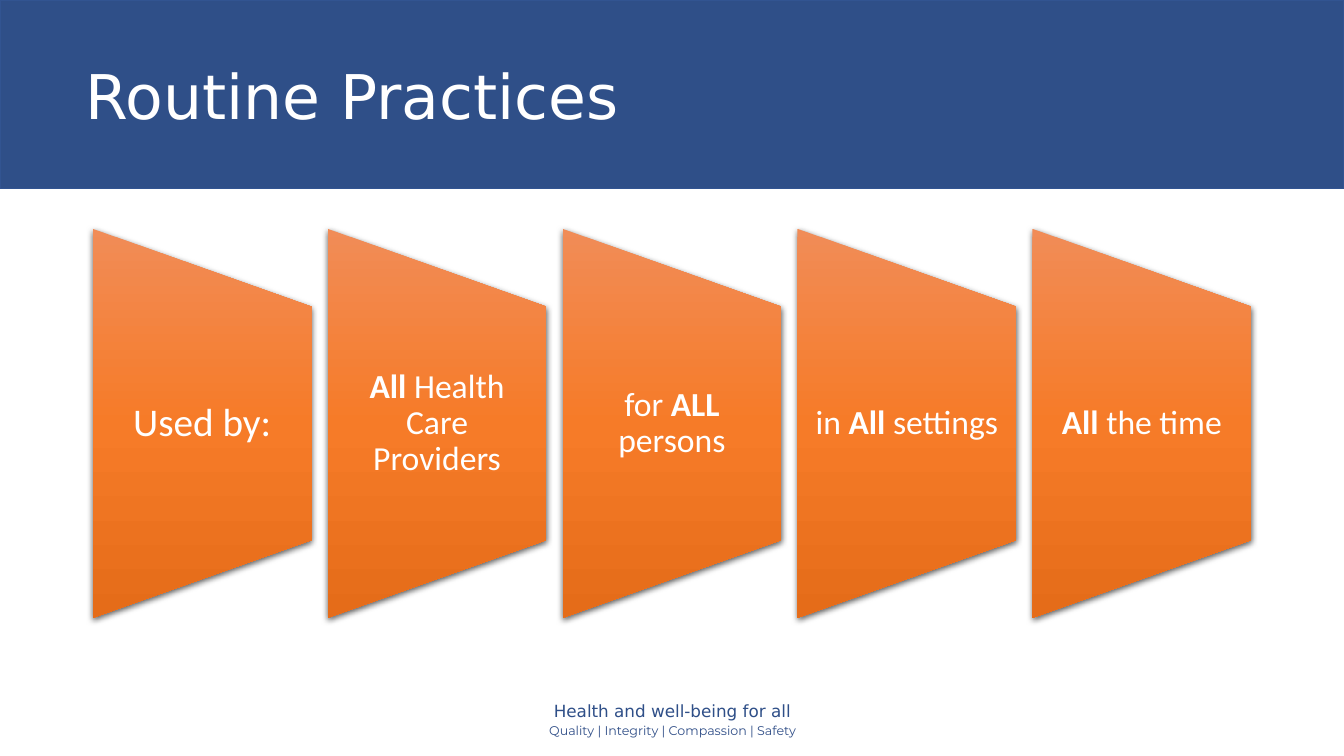
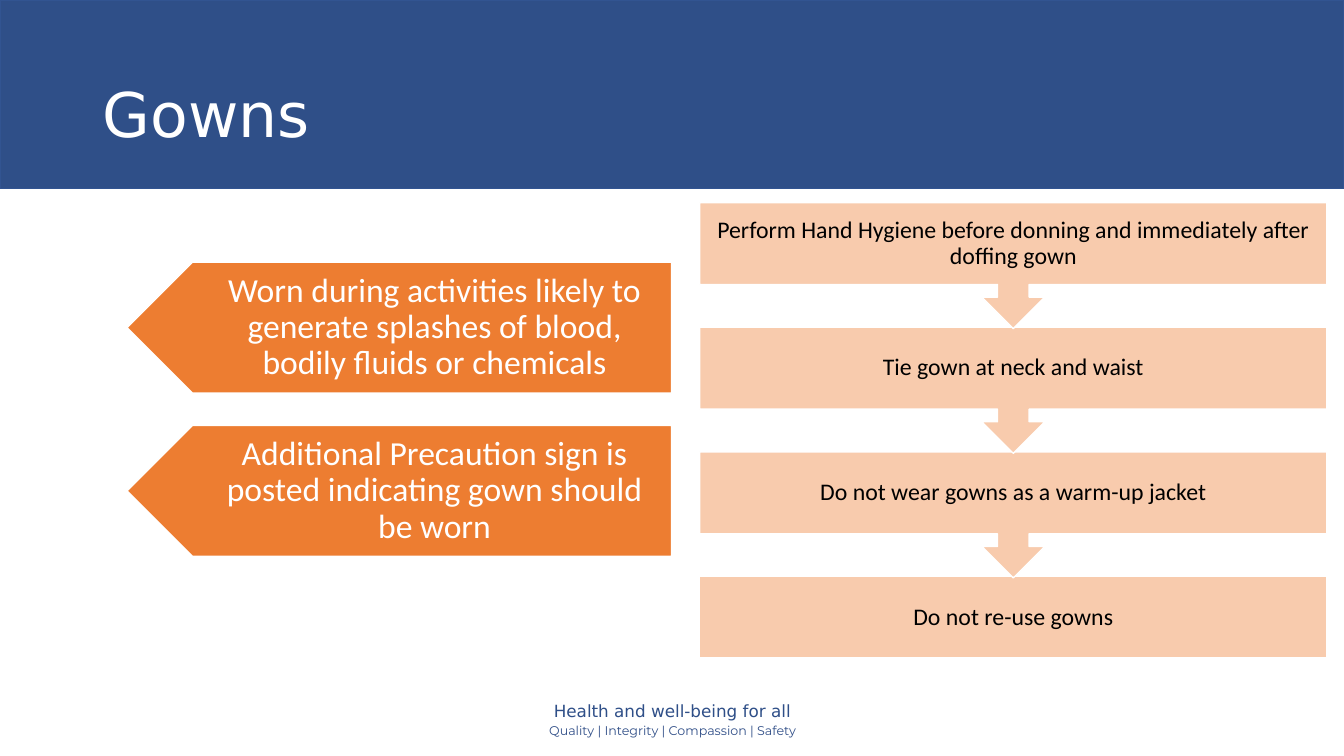
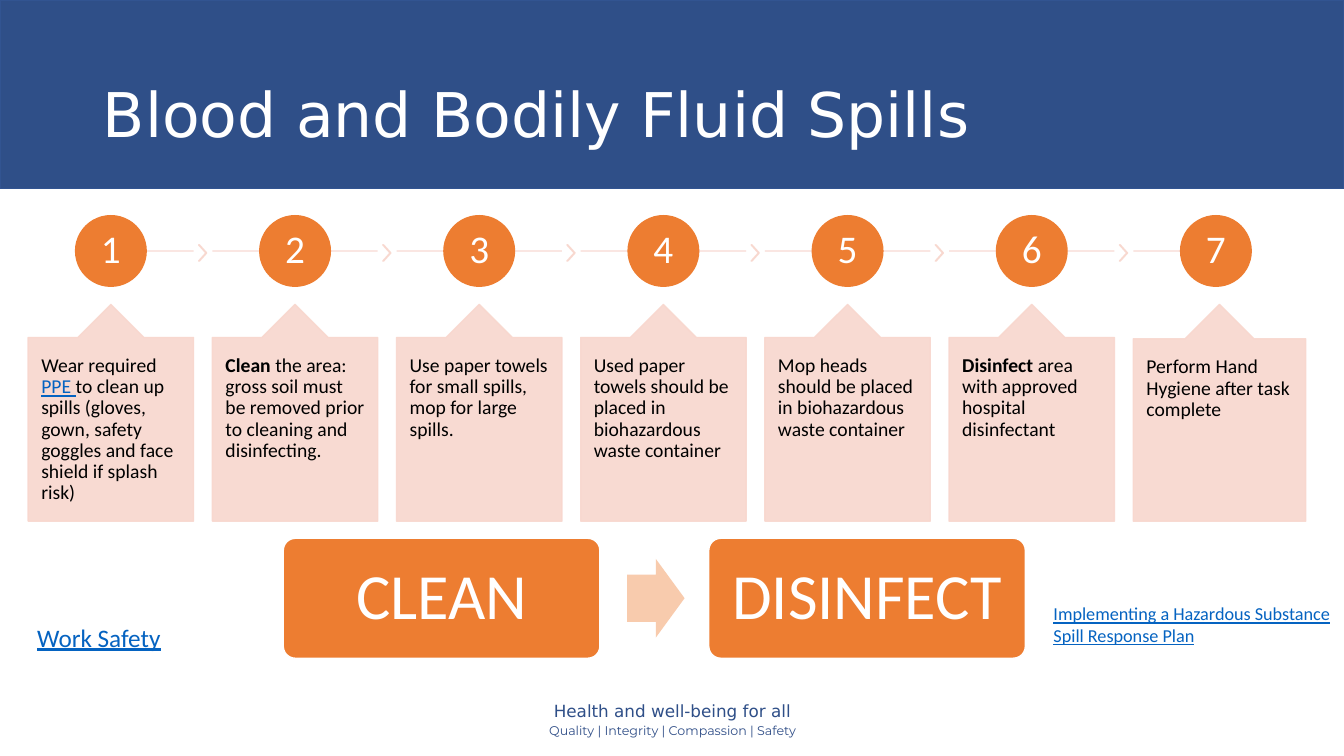
from pptx import Presentation
from pptx import util as u
from pptx.dml.color import RGBColor
from pptx.enum import shapes, text
from pptx.oxml import parse_xml
from pptx.oxml.ns import qn
from lxml import etree

W, H = 13.33, 7.5
NAVY, NAVY_LINE, NAVY_TEXT = "2F4F88", "325491", "314F88"
ORANGE, PEACH, PINK = "ED7D31", "F8CBAD", "F8D7CE"
WHITE, BLACK, LINK = "FFFFFF", "000000", "0563C1"
HEAD, BODY, SMALL = "DejaVu Sans", "Calibri", "Montserrat"
NS = 'xmlns:a="http://schemas.openxmlformats.org/drawingml/2006/main"'
MSO = shapes.MSO_SHAPE
LEFT, CENTER = text.PP_ALIGN.LEFT, text.PP_ALIGN.CENTER
TOP, MIDDLE, BOTTOM = text.MSO_ANCHOR.TOP, text.MSO_ANCHOR.MIDDLE, text.MSO_ANCHOR.BOTTOM
BOLD = {"bold": True}
GRADIENT = [(0, "F18C57"), (50, "F67B28"), (100, "E56C19")]


def rgb(value):
    return RGBColor.from_string(value)


def inches(*values):
    return [u.Inches(v) for v in values]


def write(sp, runs, size, color=WHITE, font=BODY, align=CENTER, anchor=MIDDLE,
          ins=(0.1, 0.05), spacing=0.9, p=None):
    """Write one paragraph; runs is a string or a list of (words, format)."""
    tf = sp.text_frame
    side, top = inches(*ins)
    frame = {"word_wrap": True, "auto_size": text.MSO_AUTO_SIZE.NONE, "vertical_anchor": anchor,
             "margin_left": side, "margin_right": side, "margin_top": top, "margin_bottom": top}
    for name, value in frame.items():
        setattr(tf, name, value)
    p = p or tf.paragraphs[0]
    p.alignment, p.line_spacing = align, spacing
    for words, fmt in [(runs, {})] if isinstance(runs, str) else runs:
        r = p.add_run()
        r.text = words
        fmt = {"name": font, "size": u.Pt(size), "color": color, **fmt}
        r.font.color.rgb = rgb(fmt.pop("color"))
        for name, value in fmt.items():
            setattr(r.font, name, value)
    return p


def add_shape(s, kind, box, fill, line=None, adj=(), rot=0):
    sp = s.shapes.add_shape(kind, *inches(*box))
    sp.shadow.inherit = False
    sp.rotation = rot
    sp.fill.solid()
    sp.fill.fore_color.rgb = rgb(fill)
    if line:
        sp.line.color.rgb = rgb(line)
        sp.line.width = u.Pt(1)
    else:
        sp.line.fill.background()
    for i, value in enumerate(adj):
        sp.adjustments[i] = value
    return sp


def add_text(s, box, runs, size, **fmt):
    sp = s.shapes.add_textbox(*inches(*box))
    write(sp, runs, size, **fmt)
    return sp


def fade(sp, percent=90):
    for color in sp.element.spPr.iter(qn("a:srgbClr")):
        etree.SubElement(color, qn("a:alpha")).set("val", str(percent * 1000))


def shade(sp):
    """Vertical gradient and a soft shadow below."""
    stops = "".join(f'<a:gs pos="{pos * 1000}"><a:srgbClr val="{c}"/></a:gs>' for pos, c in GRADIENT)
    spPr = sp.element.spPr
    spPr.replace(spPr.find(qn("a:solidFill")), parse_xml(
        f'<a:gradFill {NS} rotWithShape="0"><a:gsLst>{stops}</a:gsLst>'
        '<a:lin ang="5400000" scaled="0"/></a:gradFill>'))
    spPr.find(qn("a:effectLst")).append(parse_xml(
        f'<a:outerShdw {NS} blurRad="57150" dist="19050" dir="5400000" algn="ctr" rotWithShape="0">'
        '<a:srgbClr val="000000"><a:alpha val="63000"/></a:srgbClr></a:outerShdw>'))


def share_frame(s, layout):
    """Band and footer, moved to the layout so that every slide shows them."""
    band = add_shape(s, MSO.RECTANGLE, (0, 0, W, 1.87), NAVY, NAVY_LINE)
    footer = add_text(s, (4.59, 6.9, 4.16, 0.48), "Health and well-being for all", 12,
                      color=NAVY, font=HEAD, anchor=TOP, spacing=1)
    write(footer, "Quality | Integrity | Compassion | Safety", 9, color=NAVY_TEXT, font=SMALL,
          anchor=TOP, spacing=1, p=footer.text_frame.add_paragraph())
    for p in footer.text_frame.paragraphs:
        p.space_after = u.Pt(1.5)
    for i, sp in enumerate((band, footer)):
        sp.element.xpath(".//p:cNvPr")[0].set("id", str(100 + i))
        layout.shapes.element.insert(2 + i, sp.element)


def add_title(s, words, left=0.92, top=0.4, anchor=BOTTOM):
    sp = s.shapes.title
    sp.left, sp.top, sp.width, sp.height = inches(left, top, 11.5, 1.15)
    write(sp, words, 44, font=HEAD, align=LEFT, anchor=anchor)


def panel_row(s, box, panels):
    """Equal tapering panels side by side."""
    x, y, w, h = box
    gap = 0.16
    pw = (w - gap * (len(panels) - 1)) / len(panels)
    for i, (runs, size) in enumerate(panels):
        left = x + i * (pw + gap)
        # the shape lies on its side, so its width is the panel height
        sp = add_shape(s, MSO.FLOWCHART_MANUAL_OPERATION,
                       (left + (pw - h) / 2, y + (h - pw) / 2, h, pw), ORANGE, rot=270)
        shade(sp)
        add_text(s, (left, y + h / 5, pw, h * 0.6), runs, size, ins=(0.17, 0))


def step_stack(s, box, steps):
    """Boxes from top to bottom, each pointing at the next."""
    x, y, w, h = box
    body, pitch = 0.81, (h - 0.81) / (len(steps) - 1)
    for i, words in reversed(list(enumerate(steps))):
        last = i == len(steps) - 1
        sp = add_shape(s, MSO.RECTANGLE if last else MSO.DOWN_ARROW_CALLOUT,
                       (x, y + i * pitch, w, body if last else 1.25), PEACH, WHITE)
        write(sp, words, 17, color=BLACK, ins=(0.13, 0.1))


def pointer_stack(s, box, notes):
    """Left-pointing plates, one below the other."""
    x, y, w, h = box
    plate = 1.3
    pitch = (h - plate) / (len(notes) - 1)
    for i, words in enumerate(notes):
        top = y + i * pitch
        add_shape(s, MSO.PENTAGON, (x, top, w, plate), ORANGE, WHITE, rot=180)
        add_text(s, (x + 0.7, top, w - 0.7, plate), words, 24, ins=(0.19, 0.1))


def timeline(s, box, steps):
    """Numbered circles on a line, with a callout card below each."""
    x, y, w, h = box
    card, disc, last = 1.64, 0.7, len(steps) - 1
    pitch = (w - 1.71) / last
    for i, runs in enumerate(steps):
        left = x + i * pitch
        mid, axis = left + card / 2, y + disc / 2
        # line and chevron
        line = s.shapes.add_connector(shapes.MSO_CONNECTOR.STRAIGHT, *inches(
            left if i else mid, axis, left + card if i < last else mid, axis))
        line.line.color.rgb = rgb(PINK)
        line.line.width = u.Pt(1)
        etree.SubElement(line.element.spPr, qn("a:effectLst"))
        fade(line)
        if i < last:
            fade(add_shape(s, MSO.CHEVRON, (left + 1.69, axis - 0.06, 0.08, 0.16), PINK, PINK, [0.9]))
        # number
        sp = add_shape(s, MSO.OVAL, (mid - disc / 2, y, disc, disc), ORANGE, ORANGE)
        write(sp, str(i + 1), 28, ins=(0.03, 0.03))
        # card
        sp = add_shape(s, MSO.UP_ARROW_CALLOUT,
                       (left, y + 0.88, card if i < last else 1.71, h - 0.88),
                       PINK, PINK, [0.5, 0.2, 0.2, 1])
        fade(sp)
        write(sp, runs, 14, color=BLACK, align=LEFT, anchor=TOP, ins=(0.13, 0.18))


def two_stages(s, box, names):
    """Two rounded blocks with an arrow between them."""
    x, y, w, h = box
    block = 3.14
    for left, words in zip((x, x + w - block), names):
        sp = add_shape(s, MSO.ROUNDED_RECTANGLE, (left, y, block, h), ORANGE, WHITE, [0.1])
        write(sp, words, 46, ins=(0.1, 0.1))
    add_shape(s, MSO.RIGHT_ARROW, (x + 3.41, y + (h - 0.78) / 2, 0.57, 0.78), PEACH, adj=[0.6, 0.5])


def main():
    prs = Presentation()
    prs.slide_width, prs.slide_height = inches(W, H)
    layout = prs.slide_layouts[5]
    routine, gowns, spills = [prs.slides.add_slide(layout) for _ in range(3)]
    share_frame(routine, layout)

    add_title(routine, "Routine Practices", 0.75, 0.61, TOP)
    panel_row(routine, (0.92, 2.27, 11.49, 3.86), [
        ("Used by:", 28),
        ([("All ", BOLD), ("Health Care Providers", {})], 24),
        ([("for", {}), (" ALL ", BOLD), ("persons", {})], 24),
        ([("in ", {}), ("All ", BOLD), ("settings", {})], 24),
        ([("All ", BOLD), ("the time", {})], 24)])

    add_title(gowns, "Gowns")
    step_stack(gowns, (6.94, 2.01, 6.22, 4.52), [
        "Perform Hand Hygiene before donning and immediately after doffing gown",
        "Tie gown at neck and waist",
        "Do not wear gowns as a warm-up jacket",
        "Do not re-use gowns"])
    pointer_stack(gowns, (1.26, 2.6, 5.4, 2.92), [
        "Worn during activities likely to generate splashes of blood, bodily fluids or chemicals",
        "Additional Precaution sign is posted indicating gown should be worn"])

    add_title(spills, "Blood and Bodily Fluid Spills")
    link = {"color": LINK, "underline": True}
    timeline(spills, (0.28, 2.14, 12.67, 3.03), [
        [("Wear required", {}), (" PPE ", link),
         ("to clean up spills (gloves, gown, safety goggles and face shield if splash risk)", {})],
        [("Clean", BOLD),
         (" the area: gross soil must be removed prior to cleaning and disinfecting.", {})],
        "Use paper towels for small spills, mop for large spills.",
        "Used paper towels should be placed in biohazardous waste container",
        "Mop heads should be placed in biohazardous waste container",
        [("Disinfect", BOLD), (" area with approved hospital disinfectant", {})],
        "Perform Hand Hygiene after task complete"])
    two_stages(spills, (2.81, 5.34, 7.36, 1.19), ["CLEAN", "DISINFECT"])
    for box, words, size in [
            ((10.35, 5.93, 2.98, 0.54), "Implementing a Hazardous Substance Spill Response Plan", 13),
            ((0.27, 6.12, 2.05, 0.4), "Work Safety", 18)]:
        add_text(spills, box, [(words, link)], size, align=LEFT, anchor=TOP, spacing=1)

    prs.save("out.pptx")


if __name__ == "__main__":
    main()
